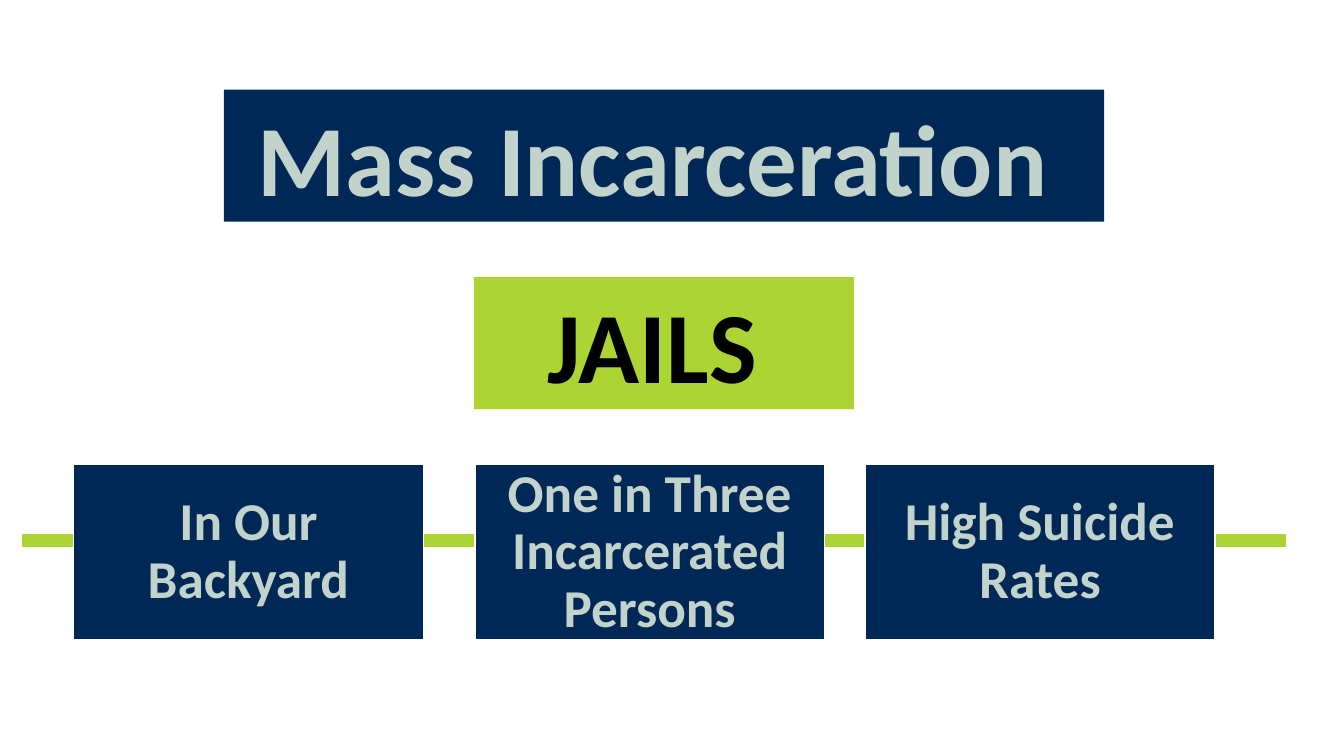
from dataclasses import dataclass

from lxml import etree
from pptx import Presentation
from pptx import util as u
from pptx.dml.color import RGBColor
from pptx.enum import shapes, text
from pptx.oxml.ns import qn
from pptx.shapes.autoshape import Shape
from pptx.slide import Slide


@dataclass(frozen=True)
class Theme:
    navy: RGBColor = RGBColor.from_string("002856")
    lime: RGBColor = RGBColor.from_string("ACD433")
    sage: RGBColor = RGBColor.from_string("C1D3CA")
    black: RGBColor = RGBColor.from_string("000000")
    white: RGBColor = RGBColor.from_string("FFFFFF")
    font: str = "Calibri"
    heading_size: int = 72
    fact_size: int = 38


@dataclass(frozen=True)
class Panel:
    words: str
    left: float
    top: float
    width: float
    height: float
    fill: RGBColor
    ink: RGBColor
    size: int


THEME = Theme()
TITLE = Panel("Mass Incarceration ", 2.22, 0.89, 8.73, 1.31,
              THEME.navy, THEME.sage, THEME.heading_size)
JAILS = Panel("JAILS ", 4.7, 2.75, 3.77, 1.31,
              THEME.lime, THEME.black, THEME.heading_size)
FACTS = [
    Panel(words, left, 4.61, 3.47, 1.74, THEME.navy, THEME.sage, THEME.fact_size)
    for words, left in (
        ("In Our Backyard", 0.73),
        ("One in Three Incarcerated Persons", 4.71),
        ("High Suicide Rates", 8.58),
    )
]


def add_box(page: Slide, panel: Panel) -> Shape:
    box = page.shapes.add_shape(shapes.MSO_SHAPE.RECTANGLE, 0, 0, 0, 0)
    box.shadow.inherit = False
    return format_panel(box, panel)


def format_panel(box: Shape, panel: Panel) -> Shape:
    box.left, box.top = u.Inches(panel.left), u.Inches(panel.top)
    box.width, box.height = u.Inches(panel.width), u.Inches(panel.height)
    box.fill.solid()
    box.fill.fore_color.rgb = panel.fill
    box.line.fill.background()
    frame = box.text_frame
    frame.text = panel.words
    frame.word_wrap = True
    frame.auto_size = text.MSO_AUTO_SIZE.NONE
    frame.vertical_anchor = text.MSO_ANCHOR.MIDDLE
    para = frame.paragraphs[0]
    para.alignment = text.PP_ALIGN.CENTER
    para.font.name = THEME.font
    para.font.size = u.Pt(panel.size)
    para.font.bold = True
    para.font.color.rgb = panel.ink
    return box


def add_fact(page: Slide, panel: Panel) -> None:
    box = add_box(page, panel)
    box.line.color.rgb = THEME.white
    box.line.width = u.Pt(1)
    frame = box.text_frame
    frame.margin_left = frame.margin_right = u.Inches(0.03)
    frame.margin_top = frame.margin_bottom = u.Inches(0.03)
    frame.paragraphs[0].line_spacing = 0.9


def add_timeline(page: Slide) -> None:
    line = page.shapes.add_connector(
        shapes.MSO_CONNECTOR.STRAIGHT,
        u.Inches(0.22), u.Inches(5.36), u.Inches(12.75), u.Inches(5.36))
    line.line.color.rgb = THEME.lime
    line.line.width = u.Pt(9)
    etree.SubElement(line._element.spPr, qn("a:effectLst"))


def main() -> None:
    deck = Presentation()
    deck.slide_width, deck.slide_height = u.Inches(13.33), u.Inches(7.5)
    page = deck.slides.add_slide(deck.slide_layouts[5])

    # Headings
    format_panel(page.shapes.title, TITLE)
    add_box(page, JAILS)

    # Facts strung along the line
    add_timeline(page)
    for fact in FACTS:
        add_fact(page, fact)

    deck.save("out.pptx")


if __name__ == "__main__":
    main()
